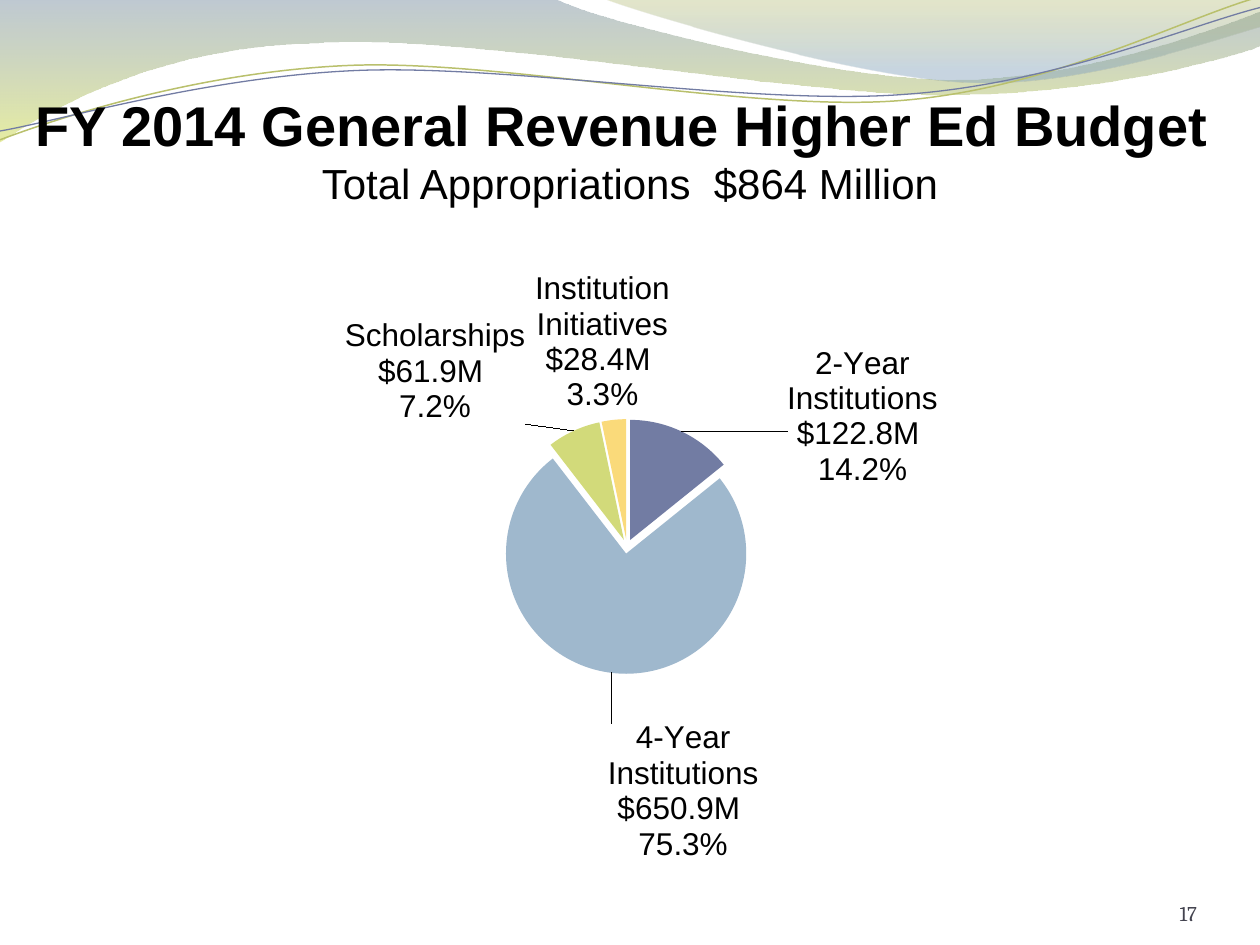
"""Build the FY 2014 higher education budget slide: waves, title and exploded pie."""
from lxml import etree
from pptx import Presentation
from pptx import util as u
from pptx.chart.data import CategoryChartData
from pptx.dml.color import RGBColor
from pptx.enum import chart as ch, text
from pptx.oxml.ns import qn

WIDTH, HEIGHT = 10, 7.5
HEADINGS = [
    ("FY 2014 General Revenue Higher Ed Budget ", dict(size=u.Pt(32), bold=True)),
    ("Total Appropriations  $864 Million", dict(size=u.Pt(24), bold=False)),
]
PAGE = "17"
# name, amount, share, dollars, colour, label shift as a share of the chart
BUDGET = [
    ("2-Year Institutions", "$122.8M ", "14.2%", 122_800_000, "727CA3", (0.09, 0.1)),
    ("4-Year Institutions", "$650.9M ", "75.3%", 650_900_000, "9FB8CD", (0.13, 0.07)),
    ("Scholarships", "$61.9M ", "7.2%", 61_900_000, "D2DA7A", (-0.04, 0)),
    ("Institution Initiatives", "$28.4M ", "3.3%", 28_400_000, "FADA7A", (0.05, 0)),
]
PLOT = dict(x=0.085, y=0.286, w=0.787, h=0.411)
EXPLOSION = 6
BANDS = [
    dict(start=(0, 0), stops=[(0, "72889B", 45), (1, "D3DE57", 55)], segments=[
        [(4.4, -0.01)],
        [(4.76, 0.17), (6.64, 0.63), (7.58, 0.63)],
        [(8.53, 0.63), (9.58, 0.26), (10, 0.09)],
        [(10.01, 0.36)],
        [(9.83, 0.44), (8.7, 0.76), (7.46, 0.75)],
        [(6.22, 0.75), (3.82, 0.28), (2.57, 0.34)],
        [(1.29, 0.36), (0.46, 0.83), (-0.01, 1.13)]]),
    dict(start=(4.79, -0.01), stops=[(0, "A4AC50", 30), (0.8, "84A3BD", 45)], segments=[
        [(5.09, 0.11), (6.82, 0.62), (7.69, 0.65)],
        [(8.56, 0.69), (9.61, 0.32), (10, 0.21)],
        [(10, 0)]]),
]
WAVES = [
    dict(start=(0, 1.11), line=("B9C06C", 0.85), segments=[
        [(0.48, 0.93), (1.58, 0.57), (2.77, 0.52)],
        [(3.95, 0.47), (5.93, 0.89), (7.13, 0.8)],
        [(8.33, 0.71), (9.38, 0.15), (9.98, -0.02)]]),
    dict(start=(0, 1.04), line=("727CA3", 0.75), segments=[
        [(0.47, 0.96), (1.64, 0.61), (2.83, 0.56)],
        [(4.03, 0.51), (5.97, 0.84), (7.17, 0.75)],
        [(8.36, 0.67), (9.41, 0.21), (10, 0.06)]]),
]


def rgb(value):
    """Turn a hex string into a colour."""
    return RGBColor.from_string(value)


def apply(target, formats):
    """Set every attribute in the dict on the target."""
    for key, value in formats.items():
        setattr(target, key, value)


def style(font, name, colour, **formats):
    """Format a font."""
    apply(font, dict(name=name, **formats))
    font.color.rgb = rgb(colour)


def place(shape, left, top, width, height):
    """Put a shape at a position in inches."""
    apply(shape, dict(left=u.Inches(left), top=u.Inches(top),
                      width=u.Inches(width), height=u.Inches(height)))


def bend(curve, segments):
    """Join each three-point segment of an outline into one cubic curve."""
    steps = iter(list(curve.element.iter(qn("a:lnTo"))))
    for segment in segments:
        nodes = [next(steps) for _ in segment]
        if len(nodes) == 3:
            cubic = etree.Element(qn("a:cubicBezTo"))
            nodes[0].addprevious(cubic)
            for node in nodes:
                cubic.append(node[0])
                node.getparent().remove(node)


def add_curve(slide, start, segments, stops=None, line=None):
    """Draw a gradient band or an open wave line."""
    first, *rest = [(u.Inches(x), u.Inches(y)) for x, y in [start, *sum(segments, [])]]
    builder = slide.shapes.build_freeform(*first)
    builder.add_line_segments(rest, close=bool(stops))
    curve = builder.convert_to_shape()
    bend(curve, segments)
    curve.shadow.inherit = False
    if line:
        curve.fill.background()
        curve.line.color.rgb = rgb(line[0])
        curve.line.width = u.Pt(line[1])
        return
    curve.line.fill.background()
    curve.fill.gradient()
    curve.fill.gradient_angle = 270
    for stop, (position, colour, _) in zip(curve.fill.gradient_stops, stops):
        stop.position = position
        stop.color.rgb = rgb(colour)
    for node, (_, _, opacity) in zip(curve.element.iter(qn("a:srgbClr")), stops):
        etree.SubElement(node, qn("a:alpha")).set("val", str(opacity * 1000))


def manual_layout(values):
    """Make a chart layout element from named values."""
    layout = etree.Element(qn("c:layout"))
    manual = etree.SubElement(layout, qn("c:manualLayout"))
    for name, value in values.items():
        etree.SubElement(manual, qn(f"c:{name}")).set("val", str(value))
    return layout


def add_title(slide):
    """Fill the title placeholder and bring it in front of the waves."""
    title = slide.shapes.title
    place(title, 0, 0.67, WIDTH, 1.31)
    frame = title.text_frame
    frame.text = "\n".join(words for words, _ in HEADINGS)
    apply(frame, dict(vertical_anchor=text.MSO_ANCHOR.TOP, word_wrap=True,
                      auto_size=text.MSO_AUTO_SIZE.NONE))
    for paragraph, (_, formats) in zip(frame.paragraphs, HEADINGS):
        apply(paragraph, dict(alignment=text.PP_ALIGN.CENTER, space_before=u.Pt(0)))
        style(paragraph.runs[0].font, "Arial", "000000", **formats)
    title.element.getparent().append(title.element)


def add_budget(slide):
    """Add the pie with its shifted labels."""
    data = CategoryChartData(number_format='"$"#,##0')
    data.categories = [str(n) for n in range(1, len(BUDGET) + 1)]
    data.add_series("Series 1", [row[3] for row in BUDGET])
    pie = slide.shapes.add_chart(ch.XL_CHART_TYPE.PIE, u.Inches(0.67), u.Inches(1.92),
                                 u.Inches(9), u.Inches(4.92), data).chart
    apply(pie, dict(has_legend=False, has_title=False))
    style(pie.font, "Cambria", "000000", size=u.Pt(10))
    pie.plots[0].vary_by_categories = True
    series = pie.plots[0].series[0]
    series.format.line.fill.background()
    labels = series.data_labels
    apply(labels, dict(show_value=True, show_percentage=True, show_category_name=True,
                       position=ch.XL_LABEL_POSITION.OUTSIDE_END))
    style(labels.font, "Arial", "000000", size=u.Pt(18))
    for index, (name, amount, share, _, colour, _) in enumerate(BUDGET):
        point = series.points[index]
        point.format.fill.solid()
        point.format.fill.fore_color.rgb = rgb(colour)
        label = point.data_label
        label.text_frame.text = "\n".join((name, amount, share))
        label.position = ch.XL_LABEL_POSITION.OUTSIDE_END
        for paragraph in label.text_frame.paragraphs:
            style(paragraph.runs[0].font, "Arial", "000000", size=u.Pt(18))
    root = pie.plots[0]._element.getparent().getparent()
    for node, row in zip(root.iter(qn("c:dLbl")), BUDGET):
        node.find(qn("c:idx")).addnext(manual_layout(dict(zip("xy", row[5]))))
    explosion = etree.Element(qn("c:explosion"), val=str(EXPLOSION))
    root.find(".//" + qn("c:ser")).find(qn("c:spPr")).addnext(explosion)
    area = root.find(qn("c:plotArea"))
    for old in area.findall(qn("c:layout")):
        area.remove(old)
    area.insert(0, manual_layout(dict(layoutTarget="inner", xMode="edge", yMode="edge", **PLOT)))


def add_page(slide):
    """Add the page number."""
    page = slide.shapes.add_textbox(0, 0, 0, 0)
    place(page, 8.67, 6.95, 0.83, 0.4)
    frame = page.text_frame
    apply(frame, dict(text=PAGE, word_wrap=True, vertical_anchor=text.MSO_ANCHOR.BOTTOM,
                      margin_left=0, margin_right=0, margin_top=0, margin_bottom=0))
    frame.paragraphs[0].alignment = text.PP_ALIGN.RIGHT
    style(frame.paragraphs[0].runs[0].font, "Cambria", "43434F", size=u.Pt(12))


def main():
    """Assemble and save the slide."""
    deck = Presentation()
    apply(deck, dict(slide_width=u.Inches(WIDTH), slide_height=u.Inches(HEIGHT)))
    slide = deck.slides.add_slide(deck.slide_layouts[5])
    for curve in BANDS + WAVES:
        add_curve(slide, **curve)
    add_title(slide)
    add_budget(slide)
    add_page(slide)
    deck.save("out.pptx")


if __name__ == "__main__":
    main()
